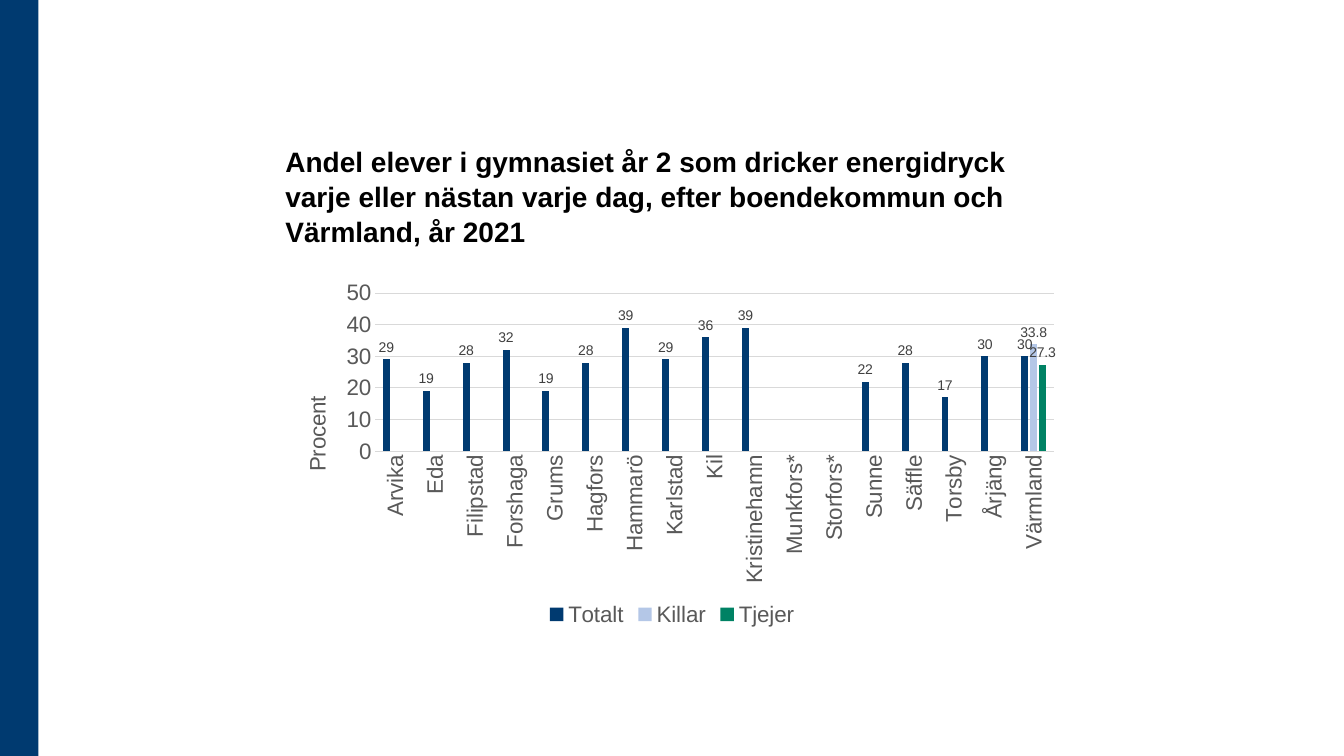
from dataclasses import dataclass

from pptx import Presentation
from pptx.chart.data import CategoryChartData
from pptx.dml.color import RGBColor
from pptx.enum.chart import XL_CHART_TYPE, XL_LABEL_POSITION, XL_LEGEND_POSITION, XL_TICK_MARK
from pptx.enum.shapes import MSO_SHAPE
from pptx.enum.text import MSO_ANCHOR, MSO_AUTO_SIZE, PP_ALIGN
from pptx.oxml import parse_xml
from pptx.oxml.ns import nsdecls, qn
from pptx.util import Inches, Pt

COLUMNS = XL_CHART_TYPE.COLUMN_CLUSTERED
OUTSIDE_END = XL_LABEL_POSITION.OUTSIDE_END
LEGEND_BOTTOM = XL_LEGEND_POSITION.BOTTOM
NO_TICK = XL_TICK_MARK.NONE
RECTANGLE = MSO_SHAPE.RECTANGLE
ANCHOR_BOTTOM = MSO_ANCHOR.BOTTOM
NO_AUTOFIT = MSO_AUTO_SIZE.NONE
ALIGN_LEFT = PP_ALIGN.LEFT

FONT = "Arial"
NAVY = "003A70"
GREY = "595959"
GRID_GREY = "D9D9D9"
UPWARDS = "-5400000"

MUNICIPALITIES = [
    "Arvika", "Eda", "Filipstad", "Forshaga", "Grums", "Hagfors", "Hammarö", "Karlstad", "Kil",
    "Kristinehamn", "Munkfors*", "Storfors*", "Sunne", "Säffle", "Torsby", "Årjäng", "Värmland",
]
ONLY_COUNTY = [None] * (len(MUNICIPALITIES) - 1)


@dataclass
class Group:
    name: str
    shares: list
    color: str
    label_format: str


GROUPS = [
    Group("Totalt", [29, 19, 28, 32, 19, 28, 39, 29, 36, 39, None, None, 22, 28, 17, 30, 30], NAVY, "0"),
    Group("Killar", ONLY_COUNTY + [33.8], "B4C7E7", "General"),
    Group("Tjejer", ONLY_COUNTY + [27.3], "008264", "General"),
]


def rgb(color: str) -> RGBColor:
    return RGBColor.from_string(color)


def set_font(font, size: float, color: str, bold: bool = False) -> None:
    font.name = FONT
    font.size = Pt(size)
    font.bold = bold
    font.color.rgb = rgb(color)


def set_line(line, color: str) -> None:
    line.color.rgb = rgb(color)
    line.width = Pt(0.75)


def set_layout(parent, index: int, target: str, **fractions: float) -> None:
    for previous in parent.findall(qn("c:layout")):
        parent.remove(previous)
    modes = "".join(f'<c:{side}Mode val="edge"/>' for side in "xy")
    values = "".join(f'<c:{key} val="{value}"/>' for key, value in fractions.items())
    parent.insert(index, parse_xml(
        f'<c:layout {nsdecls("c")}><c:manualLayout>{target}{modes}{values}</c:manualLayout></c:layout>'
    ))


def add_side_band(slide, height: int) -> None:
    band = slide.shapes.add_shape(RECTANGLE, 0, 0, Inches(0.38), height)
    band.shadow.inherit = False
    band.fill.solid()
    band.fill.fore_color.rgb = rgb(NAVY)
    band.line.fill.background()


def add_heading(slide, text: str) -> None:
    heading = slide.shapes.title
    heading.left, heading.top = Inches(2.73), Inches(1.06)
    heading.width, heading.height = Inches(7.87), Inches(1.45)
    frame = heading.text_frame
    frame.text = text
    frame.word_wrap = True
    frame.auto_size = NO_AUTOFIT
    frame.vertical_anchor = ANCHOR_BOTTOM
    paragraph = frame.paragraphs[0]
    paragraph.alignment = ALIGN_LEFT
    paragraph.line_spacing = 1.04
    set_font(paragraph.font, 20, "000000", bold=True)


def format_axes(chart) -> None:
    for axis in (chart.category_axis, chart.value_axis):
        axis.major_tick_mark = axis.minor_tick_mark = NO_TICK
        set_font(axis.tick_labels.font, 16, GREY)
    set_line(chart.category_axis.format.line, GRID_GREY)
    for body in chart.element.xpath(".//c:catAx/c:txPr/a:bodyPr"):
        body.set("rot", UPWARDS)
        body.set("vert", "horz")

    percent = chart.value_axis
    percent.minimum_scale, percent.maximum_scale, percent.major_unit = 0, 50, 10
    percent.format.line.fill.background()
    percent.has_major_gridlines = True
    set_line(percent.major_gridlines.format.line, GRID_GREY)
    percent.tick_labels.number_format = "0"
    percent.tick_labels.number_format_is_linked = False

    caption = percent.axis_title
    caption.text_frame.text = "Procent"
    set_font(caption.text_frame.paragraphs[0].font, 16, GREY)
    body = caption.element.find(".//" + qn("a:bodyPr"))
    body.set("rot", UPWARDS)
    body.set("vert", "horz")
    set_layout(caption.element, 1, "", x=0.03, y=0.33)


def format_groups(plot) -> None:
    plot.gap_width = 219
    plot.overlap = -27
    plot.vary_by_categories = False
    for group, series in zip(GROUPS, plot.series):
        series.format.fill.solid()
        series.format.fill.fore_color.rgb = rgb(group.color)
        series.invert_if_negative = False
        labels = series.data_labels
        labels.show_value = True
        labels.position = OUTSIDE_END
        labels.number_format = group.label_format
        labels.number_format_is_linked = False
        set_font(labels.font, 10, "404040")


def add_energy_drink_chart(slide) -> None:
    data = CategoryChartData()
    data.categories = MUNICIPALITIES
    for group in GROUPS:
        data.add_series(group.name, group.shares)
    chart = slide.shapes.add_chart(
        COLUMNS, Inches(2.73), Inches(2.72), Inches(7.87), Inches(3.54), data
    ).chart
    set_font(chart.font, 16, "000000")
    chart.has_title = False
    chart.has_legend = True
    chart.legend.position = LEGEND_BOTTOM
    chart.legend.include_in_layout = False
    set_font(chart.legend.font, 16, GREY)
    format_axes(chart)
    format_groups(chart.plots[0])
    plot_area = chart.element.find(".//" + qn("c:plotArea"))
    set_layout(plot_area, 0, '<c:layoutTarget val="inner"/>', x=0.126, y=0.053, w=0.855, h=0.443)


def main() -> None:
    presentation = Presentation()
    presentation.slide_width, presentation.slide_height = Inches(13.33), Inches(7.5)
    slide = presentation.slides.add_slide(presentation.slide_layouts[5])
    add_side_band(slide, presentation.slide_height)
    add_heading(slide, "Andel elever i gymnasiet år 2 som dricker energidryck varje eller nästan "
                       "varje dag, efter boendekommun och Värmland, år 2021")
    add_energy_drink_chart(slide)
    presentation.save("out.pptx")


if __name__ == "__main__":
    main()
